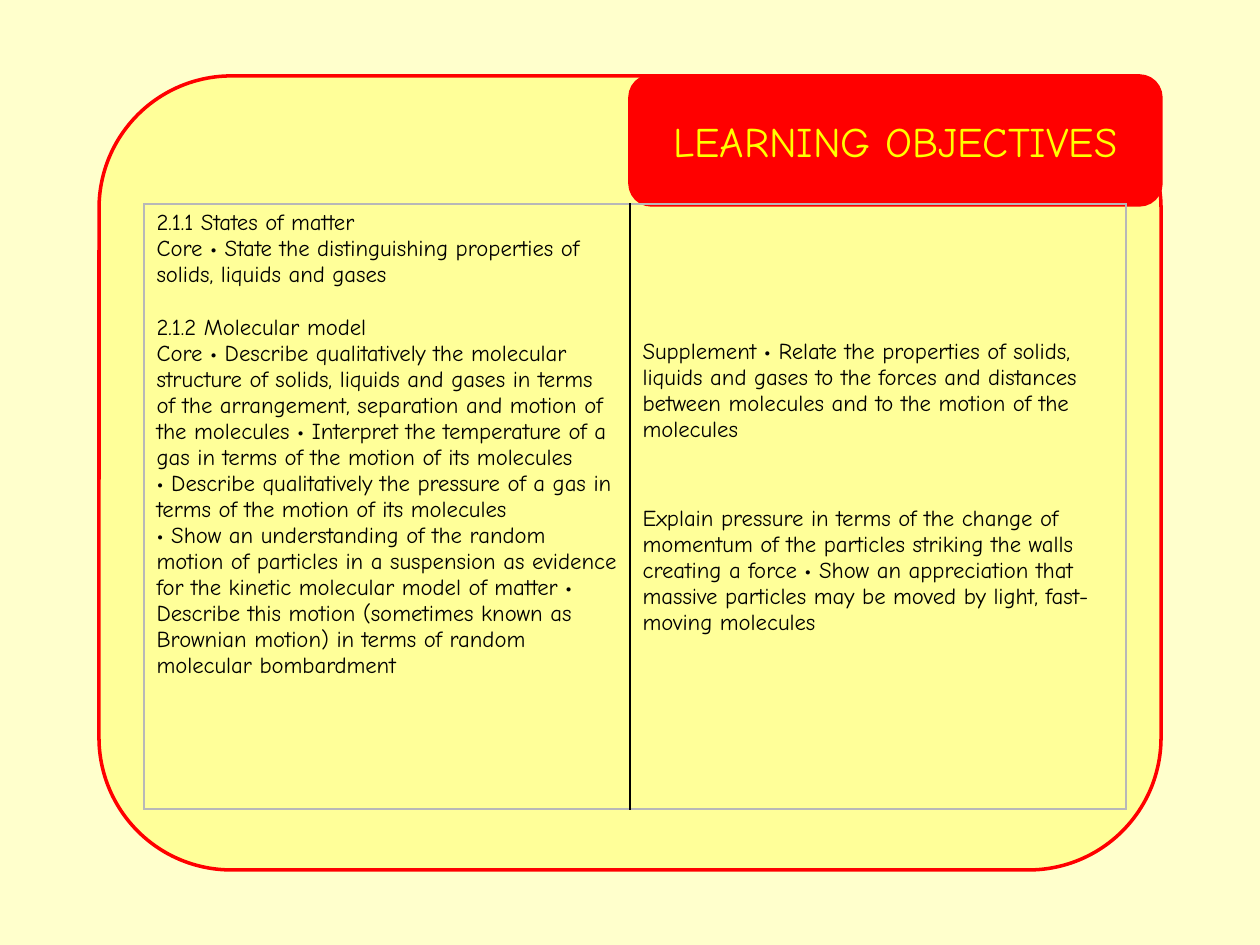
from lxml import etree
from pptx import Presentation
from pptx import util as u
from pptx.dml.color import RGBColor
from pptx.enum import shapes, text
from pptx.oxml import ns

PX = 914400 / 126
CREAM = RGBColor(0xFF, 0xFF, 0xCC)
PALE = RGBColor(0xFF, 0xFF, 0x99)
RED = RGBColor(0xFF, 0x00, 0x00)
YELLOW = RGBColor(0xFF, 0xFF, 0x00)
BLACK = RGBColor(0x00, 0x00, 0x00)
GRAY = RGBColor(0xB8, 0xB8, 0xB8)
FONT = "Comic Neue"
BODY = {"name": FONT, "size": u.Pt(13)}
HEAD = {"name": FONT, "size": u.Pt(24)}

CORE = [
    ("2.1.1 States of matter", 0),
    ("Core • State the distinguishing properties of solids, liquids and gases", 0),
    ("2.1.2 Molecular model", 15),
    ("Core • Describe qualitatively the molecular structure of solids, liquids "
     "and gases in terms of the arrangement, separation and motion of the "
     "molecules • Interpret the temperature of a gas in terms of the motion of "
     "its molecules", 0),
    ("• Describe qualitatively the pressure of a gas in terms of the motion of "
     "its molecules", 0),
    ("• Show an understanding of the random motion of particles in a suspension "
     "as evidence for the kinetic molecular model of matter • Describe this "
     "motion (sometimes known as Brownian motion) in terms of random molecular "
     "bombardment", 0),
]
EXTRA = [
    ("Supplement • Relate the properties of solids, liquids and gases to the "
     "forces and distances between molecules and to the motion of the "
     "molecules", 0),
    ("Explain pressure in terms of the change of momentum of the particles "
     "striking the walls creating a force • Show an appreciation that massive "
     "particles may be moved by light, fast- moving molecules", 36),
]


def px(n):
    return u.Emu(round(n * PX))


def style(font, form, color):
    for key, val in form.items():
        setattr(font, key, val)
    font.color.rgb = color


def panel(slide, kind, box, fill, line=None):
    shape = slide.shapes.add_shape(kind, *map(px, box))
    shape.shadow.inherit = False
    shape.fill.solid()
    shape.fill.fore_color.rgb = fill
    if line is None:
        shape.line.fill.background()
    else:
        shape.line.color.rgb = line
        shape.line.width = u.Pt(2)
    return shape


def title(shape, words):
    frame = shape.text_frame
    frame.vertical_anchor = text.MSO_ANCHOR.MIDDLE
    para = frame.paragraphs[0]
    para.alignment = text.PP_ALIGN.CENTER
    run = para.add_run()
    run.text = words
    style(run.font, HEAD, YELLOW)


def border(cell, sides):
    props = cell._tc.get_or_add_tcPr()
    for spot, (side, color) in enumerate(sides.items()):
        line = etree.Element(ns.qn(f"a:ln{side}"), w=str(u.Pt(1)))
        fill = etree.SubElement(line, ns.qn("a:solidFill"))
        etree.SubElement(fill, ns.qn("a:srgbClr"), val=str(color))
        props.insert(spot, line)


def write(cell, paras):
    frame = cell.text_frame
    for spot, (words, gap) in enumerate(paras):
        para = frame.add_paragraph() if spot else frame.paragraphs[0]
        para.space_before = u.Pt(gap)
        run = para.add_run()
        run.text = words
        style(run.font, BODY, BLACK)


def grid(slide, left, top, widths, height):
    table = slide.shapes.add_table(
        1, len(widths), px(left), px(top), px(sum(widths)), px(height)).table
    table.first_row = False
    table.horz_banding = False
    for col, width in zip(table.columns, widths):
        col.width = px(width)
    return table


def main():
    deck = Presentation()
    deck.slide_width, deck.slide_height = px(1260), px(945)
    slide = deck.slides.add_slide(deck.slide_layouts[6])
    slide.background.fill.solid()
    slide.background.fill.fore_color.rgb = PALE

    kind = shapes.MSO_SHAPE
    panel(slide, kind.RECTANGLE, (0, 0, 1260, 945), CREAM)
    panel(slide, kind.ROUNDED_RECTANGLE, (99, 76, 1062, 794), PALE, RED)
    tab = panel(slide, kind.ROUNDED_RECTANGLE, (630, 76, 531, 129), RED, RED)
    title(tab, "LEARNING OBJECTIVES")

    table = grid(slide, 144, 204, (486, 496), 605)
    cells = [table.cell(0, col) for col in range(2)]
    cells[1].margin_top = px(135)
    edges = [(GRAY, BLACK), (BLACK, GRAY)]
    for cell, paras, (left, right) in zip(cells, (CORE, EXTRA), edges):
        write(cell, paras)
        cell.fill.background()
        border(cell, {"L": left, "R": right, "T": GRAY, "B": GRAY})
    deck.save("out.pptx")


if __name__ == "__main__":
    main()
